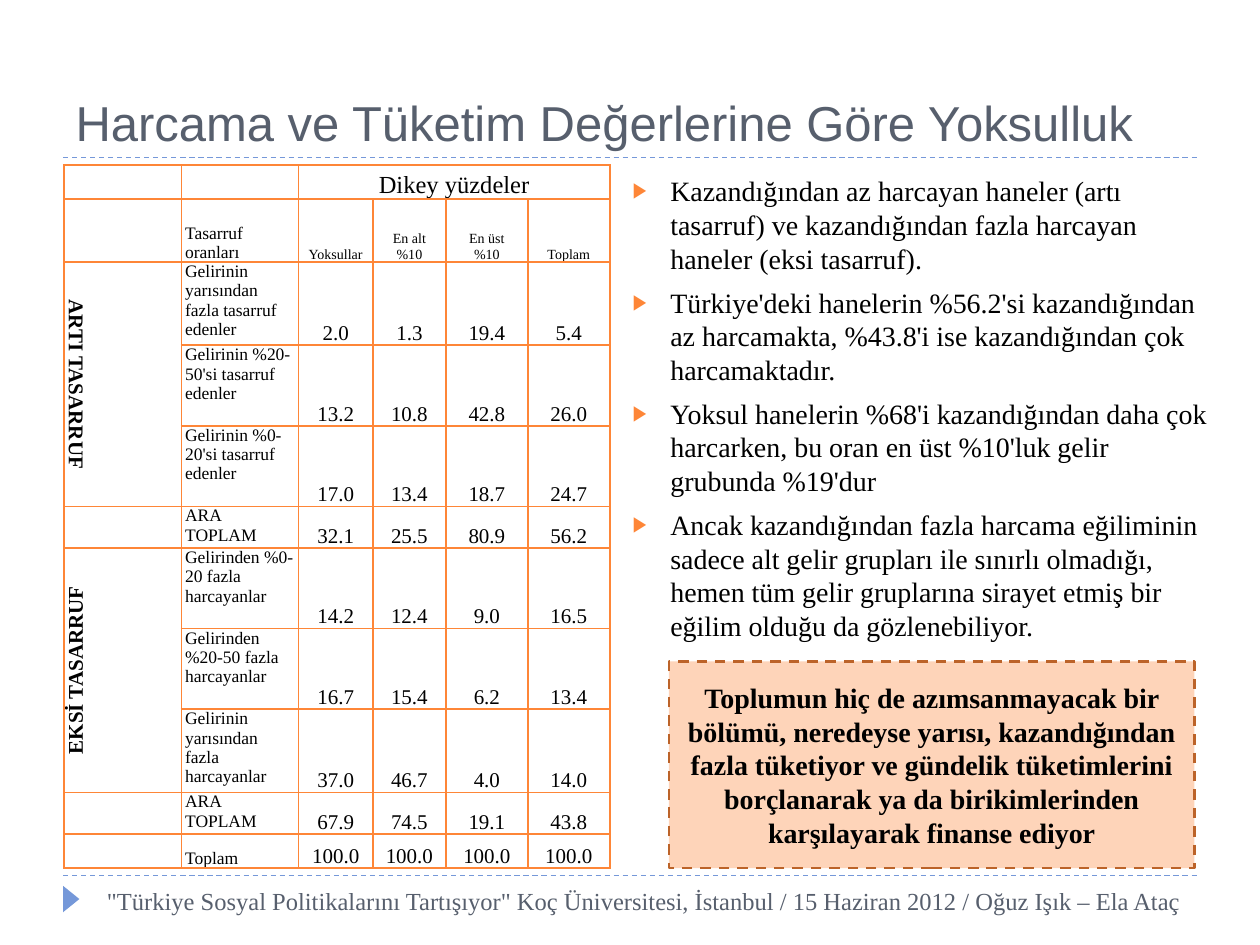
"""Build the slide on poverty by spending and consumption, with its savings table."""
import pptx
import pptx.util
import pptx.dml.color
import pptx.enum.dml
import pptx.enum.shapes
import pptx.enum.text
import pptx.oxml
import pptx.oxml.ns
import lxml.etree

Pt = pptx.util.Pt
RGBColor = pptx.dml.color.RGBColor
ALIGN = pptx.enum.text.PP_ALIGN
ANCHOR = pptx.enum.text.MSO_ANCHOR
DASH = pptx.enum.dml.MSO_LINE.DASH
qn = pptx.oxml.ns.qn
NS = pptx.oxml.ns.nsdecls("a")

BLACK = RGBColor(0x00, 0x00, 0x00)
SLATE = RGBColor(0x57, 0x5F, 0x6D)
BLUE = RGBColor(0x75, 0x98, 0xD9)
ORANGE = RGBColor(0xFE, 0x86, 0x37)
BROWN = RGBColor(0xBC, 0x63, 0x29)
SERIF = "Times New Roman"

prs = pptx.Presentation()
prs.slide_width, prs.slide_height = pptx.util.Inches(10), pptx.util.Inches(7.5)


def box(x, y, w, h):
    """Turn percentages of the slide's size into lengths."""
    return [int(share * side / 100) for share, side in
            zip((x, y, w, h), (prs.slide_width, prs.slide_height) * 2)]


def write(p, text, size, color=BLACK, font=SERIF, bold=False, align=ALIGN.LEFT):
    """Add one formatted run to a paragraph."""
    p.alignment = align
    r = p.add_run()
    r.text = text
    r.font.size, r.font.name, r.font.bold = Pt(size), font, bold
    r.font.color.rgb = color


s = prs.slides.add_slide(prs.slide_layouts[1])

for y in (16.67, 92.67):
    line = s.shapes.add_connector(pptx.enum.shapes.MSO_CONNECTOR.STRAIGHT, *box(5, y, 95, y))
    line.line.color.rgb, line.line.width, line.line.dash_style = BLUE, Pt(0.75), DASH
    lxml.etree.SubElement(line._element.spPr, qn("a:effectLst"))

sp = s.shapes.add_shape(pptx.enum.shapes.MSO_SHAPE.ISOSCELES_TRIANGLE, *box(4.6, 94.27, 2.1, 1.73))
sp.rotation = 90
sp.shadow.inherit = False
sp.fill.solid()
sp.fill.fore_color.rgb = BLUE
sp.line.fill.background()

title = s.shapes.title
title.left, title.top, title.width, title.height = box(5, 2.27, 90, 14.4)
tf = title.text_frame
tf.auto_size, tf.vertical_anchor = pptx.enum.text.MSO_AUTO_SIZE.NONE, ANCHOR.BOTTOM
write(tf.paragraphs[0], "Harcama ve Tüketim Değerlerine Göre Yoksulluk", 28, SLATE, "Arial")

columns = [0.93, 0.93, 0.59, 0.58, 0.65, 0.65]
rows = [
    (0.27, "", "", ["Dikey yüzdeler", "", "", ""]),
    (0.5, "", "Tasarruf oranları", ["Yoksullar", "En alt\n%10", "En üst\n%10", "Toplam"]),
    (0.66, "ARTI TASARRUF", "Gelirinin yarısından fazla tasarruf edenler", ["2.0", "1.3", "19.4", "5.4"]),
    (0.64, "", "Gelirinin %20-50'si tasarruf edenler", ["13.2", "10.8", "42.8", "26.0"]),
    (0.64, "", "Gelirinin %0-20'si tasarruf edenler", ["17.0", "13.4", "18.7", "24.7"]),
    (0.33, "", "ARA TOPLAM", ["32.1", "25.5", "80.9", "56.2"]),
    (0.64, "EKSİ TASARRUF", "Gelirinden %0-20 fazla harcayanlar", ["14.2", "12.4", "9.0", "16.5"]),
    (0.64, "", "Gelirinden %20-50 fazla harcayanlar", ["16.7", "15.4", "6.2", "13.4"]),
    (0.66, "", "Gelirinin yarısından fazla harcayanlar", ["37.0", "46.7", "4.0", "14.0"]),
    (0.33, "", "ARA TOPLAM", ["67.9", "74.5", "19.1", "43.8"]),
    (0.27, "", "Toplam", ["100.0"] * 4),
]
table = s.shapes.add_table(len(rows), len(columns), *box(5.1, 17.47, 43.3, 74.67)).table
table.first_row = table.horz_banding = False
for column, width in zip(table.columns, columns):
    column.width = pptx.util.Inches(width)
for i, (height, group, label, values) in enumerate(rows):
    table.rows[i].height = pptx.util.Inches(height)
    value_size = {0: 14, 1: 8}.get(i, 12)
    for j, text in enumerate([group, label, *values]):
        cell = table.cell(i, j)
        cell.margin_left = cell.margin_right = pptx.util.Inches(0.03)
        cell.margin_top = cell.margin_bottom = 0
        cell.fill.background()
        tcPr = cell._tc.get_or_add_tcPr()
        for k, side in enumerate(("lnL", "lnR", "lnT", "lnB")):
            tcPr.insert(k, pptx.oxml.parse_xml(
                f'<a:{side} {NS} w="12700"><a:solidFill><a:srgbClr val="{ORANGE}"/></a:solidFill></a:{side}>'))
        tf = cell.text_frame
        if not text:
            lxml.etree.SubElement(tf.paragraphs[0]._p, qn("a:endParaRPr"), sz="1000")
            continue
        if j == 0:
            cell.vertical_anchor = ANCHOR.MIDDLE
            tcPr.set("vert", "vert" if i == 2 else "vert270")
        elif j > 1 or label in ("Tasarruf oranları", "Toplam"):
            cell.vertical_anchor = ANCHOR.BOTTOM
        for k, part in enumerate(text.split("\n")):
            p = tf.add_paragraph() if k else tf.paragraphs[0]
            write(p, part, 10 if j == 1 else value_size, bold=j == 0,
                  align=ALIGN.LEFT if j == 1 else ALIGN.CENTER)
table.cell(0, 2).merge(table.cell(0, 5))
for i in (2, 6):
    table.cell(i, 0).merge(table.cell(i + 2, 0))

footer = s.shapes.add_textbox(*box(7.5, 93.07, 88.2, 5.33))
footer.text_frame.word_wrap = True
write(footer.text_frame.paragraphs[0],
      "\"Türkiye Sosyal Politikalarını Tartışıyor\" Koç Üniversitesi, İstanbul / 15 Haziran 2012 / Oğuz Işık – Ela Ataç",
      14, SLATE)

findings = [
    "Kazandığından az harcayan haneler (artı tasarruf) ve kazandığından fazla harcayan haneler (eksi tasarruf).",
    "Türkiye'deki hanelerin %56.2'si kazandığından az harcamakta, %43.8'i ise kazandığından çok harcamaktadır.",
    "Yoksul hanelerin %68'i kazandığından daha çok harcarken, bu oran en üst %10'luk gelir grubunda %19'dur",
    "Ancak kazandığından fazla harcama eğiliminin sadece alt gelir grupları ile sınırlı olmadığı, hemen tüm "
    "gelir gruplarına sirayet etmiş bir eğilim olduğu da gözlenebiliyor.",
]
body = s.placeholders[1]
body.left, body.top, body.width, body.height = box(49.2, 17.73, 48, 51.07)
tf = body.text_frame
tf.auto_size = pptx.enum.text.MSO_AUTO_SIZE.NONE
for i, finding in enumerate(findings):
    p = tf.add_paragraph() if i else tf.paragraphs[0]
    write(p, finding, 16)
    p.space_before = Pt(6)
    pPr = p._p.get_or_add_pPr()
    indent = pptx.util.Inches(0.3)
    pPr.set("marL", str(indent))
    pPr.set("indent", str(-indent))
    for bullet in (f'<a:buClr {NS}><a:srgbClr val="{ORANGE}"/></a:buClr>',
                   f'<a:buSzPct {NS} val="76000"/>',
                   f'<a:buChar {NS} char="▶"/>'):
        pPr.append(pptx.oxml.parse_xml(bullet))

sp = s.shapes.add_shape(pptx.enum.shapes.MSO_SHAPE.RECTANGLE, *box(53.1, 70, 41.7, 21.87))
sp.shadow.inherit = False
sp.fill.solid()
sp.fill.fore_color.rgb = ORANGE
color = sp._element.spPr.find(qn("a:solidFill")).find(qn("a:srgbClr"))
lxml.etree.SubElement(color, qn("a:alpha"), val="35000")
sp.line.color.rgb, sp.line.width, sp.line.dash_style = BROWN, Pt(1.5), DASH
tf = sp.text_frame
tf.word_wrap, tf.vertical_anchor = True, ANCHOR.MIDDLE
write(tf.paragraphs[0],
      "Toplumun hiç de azımsanmayacak bir bölümü, neredeyse yarısı, kazandığından fazla tüketiyor ve gündelik "
      "tüketimlerini borçlanarak ya da birikimlerinden karşılayarak finanse ediyor",
      16, bold=True, align=ALIGN.CENTER)

prs.save("out.pptx")
